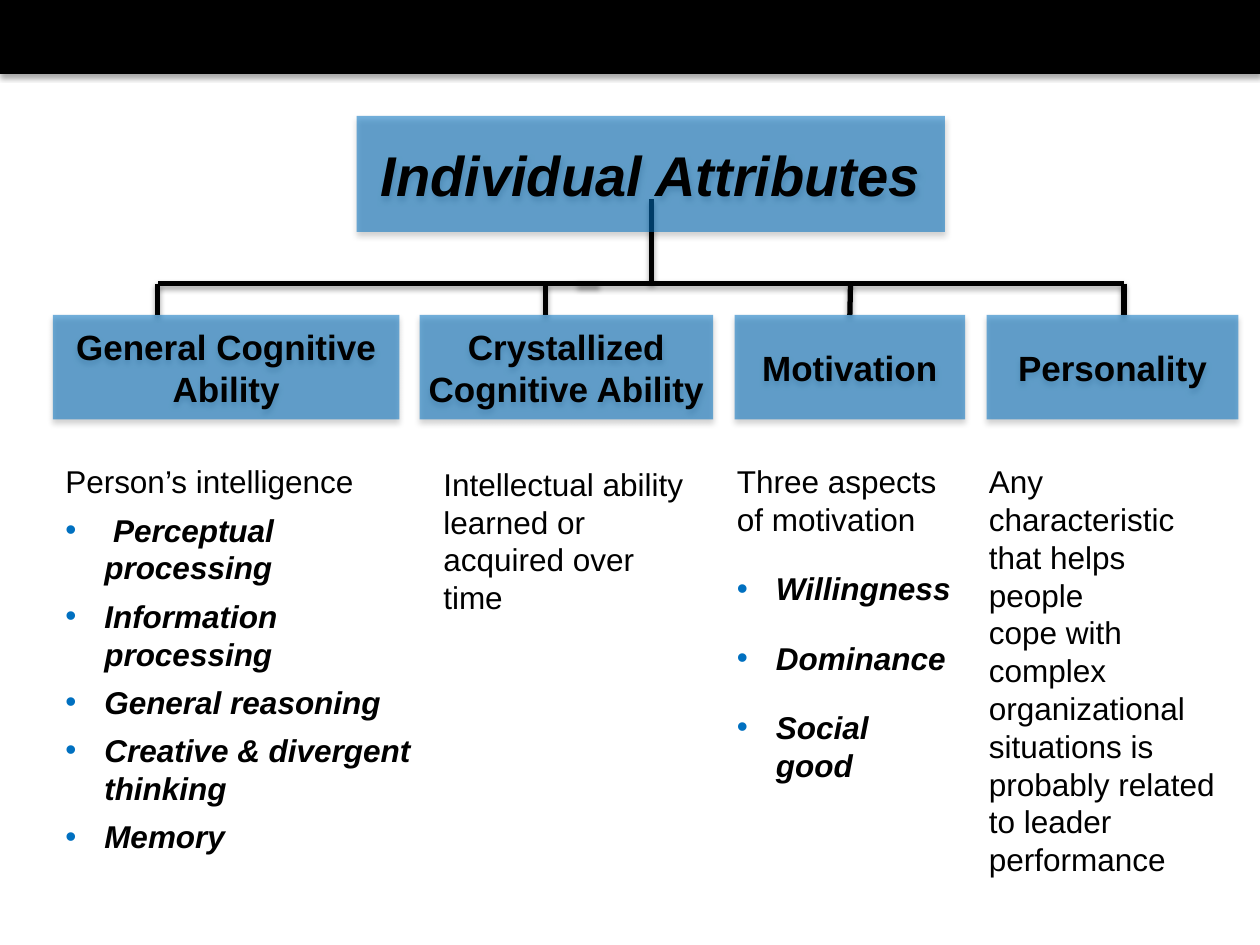
from lxml import etree
from pptx import Presentation
from pptx.dml.color import RGBColor
from pptx.enum.shapes import MSO_CONNECTOR, MSO_SHAPE
from pptx.enum.text import MSO_ANCHOR, MSO_AUTO_SIZE, PP_ALIGN
from pptx.oxml.ns import qn
from pptx.util import Inches, Pt

STRAIGHT = MSO_CONNECTOR.STRAIGHT
RECTANGLE = MSO_SHAPE.RECTANGLE
MIDDLE = MSO_ANCHOR.MIDDLE
GROW = MSO_AUTO_SIZE.SHAPE_TO_FIT_TEXT
CENTER = PP_ALIGN.CENTER

BLACK = RGBColor(0x00, 0x00, 0x00)
BLUE = RGBColor(0x00, 0x70, 0xC0)
FONT = "Arial"
FILL_OPACITY = 54
BULLET_INDENT = Inches(0.31)


def cast_shadow(shape, opacity=35, blur=3.1, distance=1.8):
    """Add a soft black shadow straight below; fill and line must be set first."""
    effects = etree.SubElement(shape._element.spPr, qn("a:effectLst"))
    shadow = etree.SubElement(
        effects, qn("a:outerShdw"), blurRad=str(Pt(blur)), dist=str(Pt(distance)),
        dir="5400000", rotWithShape="0")
    color = etree.SubElement(shadow, qn("a:srgbClr"), val=str(BLACK))
    etree.SubElement(color, qn("a:alpha"), val=str(opacity * 1000))


def style_text(para, size, bold=False, italic=False):
    for span in para.runs:
        span.font.name = FONT
        span.font.size = Pt(size)
        span.font.bold = bold
        span.font.italic = italic
        span.font.color.rgb = BLACK


deck = Presentation()
deck.slide_width = Inches(10)
deck.slide_height = Inches(7.5)
page = deck.slides.add_slide(deck.slide_layouts[6])

# Top band
band = page.shapes.add_shape(RECTANGLE, 0, 0, Inches(10), Inches(0.58))
band.fill.solid()
band.fill.fore_color.rgb = BLACK
band.line.color.rgb = BLACK
band.line.width = Pt(0.75)
cast_shadow(band)

# Tree lines, behind the boxes: stem, two halves of the crossbar, four drops
CROSSBAR_Y = 2.25
BOX_TOP = 2.5
tree_lines = [
    (5.17, 1.58, 5.17, CROSSBAR_Y),
    (4.58, CROSSBAR_Y, 8.92, CROSSBAR_Y),
    (4.75, CROSSBAR_Y, 1.25, CROSSBAR_Y),
]
tree_lines += [(x, CROSSBAR_Y, x, BOX_TOP) for x in (1.25, 4.33, 6.75, 8.92)]
connectors = []
for ends in tree_lines:
    connector = page.shapes.add_connector(STRAIGHT, *[Inches(end) for end in ends])
    connector.line.color.rgb = BLACK
    connector.line.width = Pt(3)
    cast_shadow(connector)
    connectors.append(connector)
motivation_drop = connectors[5]

# Title box and the four attribute boxes: left, top, width, height, text, size
boxes = {}
for left, top, width, height, text, size in [
    (2.83, 0.92, 4.67, 0.92, "Individual Attributes", 32),
    (0.42, BOX_TOP, 2.75, 0.83, "General Cognitive\nAbility", 20),
    (3.33, BOX_TOP, 2.33, 0.83, "Crystallized\nCognitive Ability", 20),
    (5.83, BOX_TOP, 1.83, 0.83, "Motivation", 20),
    (7.83, BOX_TOP, 2, 0.83, "Personality", 20),
]:
    box = page.shapes.add_shape(
        RECTANGLE, Inches(left), Inches(top), Inches(width), Inches(height))
    box.fill.solid()
    box.fill.fore_color.rgb = BLUE
    fill_color = box._element.spPr.find(qn("a:solidFill")).find(qn("a:srgbClr"))
    etree.SubElement(fill_color, qn("a:alpha"), val=str(FILL_OPACITY * 1000))
    box.line.fill.background()
    cast_shadow(box, opacity=32, blur=3.5, distance=2.2)
    frame = box.text_frame
    frame.word_wrap = False
    frame.vertical_anchor = MIDDLE
    frame.text = text
    for para in frame.paragraphs:
        para.alignment = CENTER
        style_text(para, size, bold=True, italic=size == 32)
    boxes[text] = box
motivation_drop.end_connect(boxes["Motivation"], 0)

# Descriptions: left, top, width, height, space after, plain lines, bullets
for left, top, width, height, gap, lines, bullets in [
    (0.42, 3.62, 3, 3.74, 6, ["Person’s intelligence"],
     [" Perceptual processing", "Information processing", "General reasoning",
      "Creative & divergent thinking", "Memory"]),
    (3.42, 3.64, 2.17, 1.31, 0,
     ["Intellectual ability learned or acquired over time"], []),
    (5.75, 3.62, 1.92, 2.68, 18, ["Three aspects of motivation"],
     ["Willingness", "Dominance", "Social good"]),
    (7.75, 3.62, 2.08, 3.43, 0,
     ["Any characteristic", "that helps people", "cope with complex",
      "organizational", "situations is",
      "probably related to leader performance"], []),
]:
    description = page.shapes.add_textbox(
        Inches(left), Inches(top), Inches(width), Inches(height))
    frame = description.text_frame
    frame.word_wrap = True
    frame.auto_size = GROW
    frame.text = "\n".join(lines + bullets)
    for index, para in enumerate(frame.paragraphs):
        is_bullet = index >= len(lines)
        para.space_after = Pt(gap)
        style_text(para, 18, bold=is_bullet, italic=is_bullet)
        if is_bullet:
            properties = para._p.get_or_add_pPr()
            properties.set("marL", str(BULLET_INDENT))
            properties.set("indent", str(-BULLET_INDENT))
            bullet_color = etree.SubElement(properties, qn("a:buClr"))
            etree.SubElement(bullet_color, qn("a:srgbClr"), val=str(BLUE))
            etree.SubElement(properties, qn("a:buFont"), typeface=FONT)
            etree.SubElement(properties, qn("a:buChar"), char="•")

deck.save("out.pptx")
